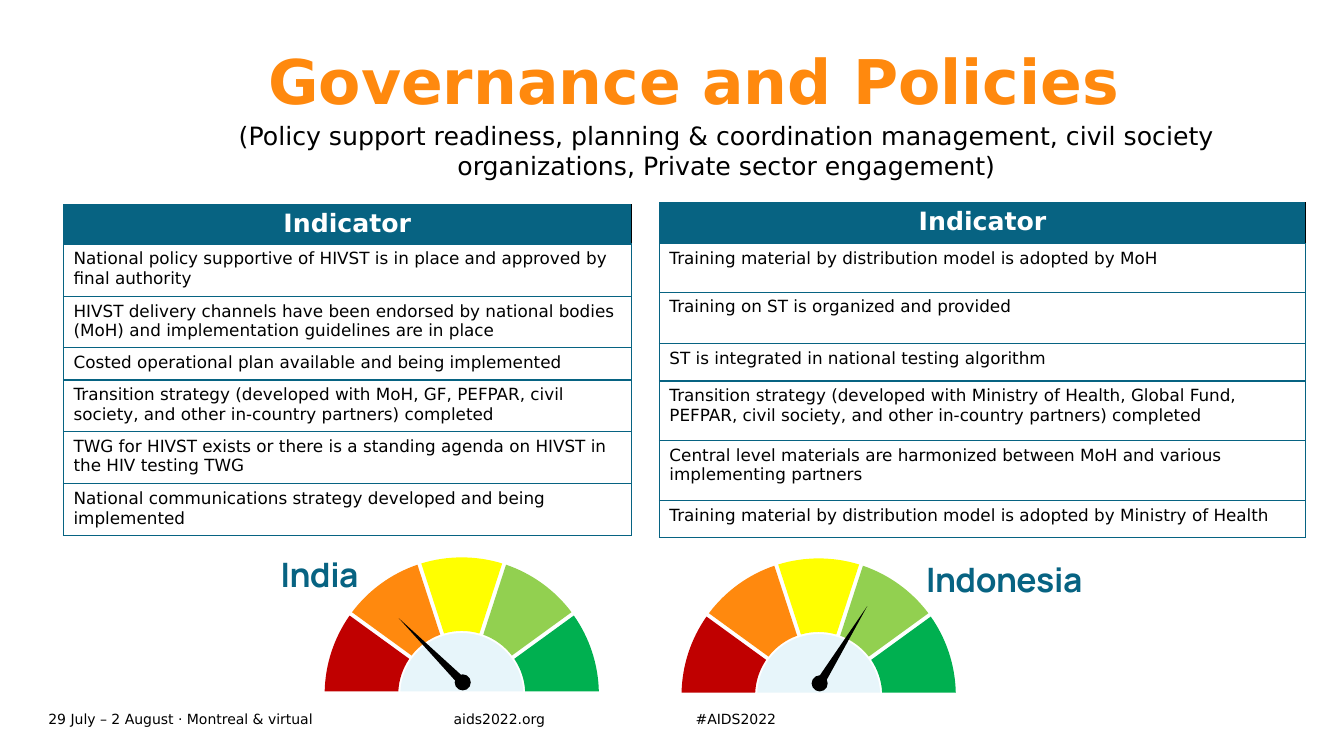
from dataclasses import dataclass
from itertools import chain, pairwise
from math import asin, cos, pi, radians, sin, tan

from lxml import etree
from pptx import Presentation
from pptx.dml.color import RGBColor
from pptx.enum import shapes, text
from pptx.oxml import ns
from pptx.util import Inches, Pt

COLORS = {
    "black": "000000", "white": "FFFFFF", "teal": "076382", "orange": "FF890E",
    "red": "C00000", "yellow": "FFFF00", "lime": "92D050", "green": "00B050",
    "hub": "E7F5FA",
}
BODY_FONT = "DejaVu Sans"
OUTER_RADIUS, INNER_RADIUS, HUB_RADIUS = 1.36, 0.63, 0.61
SLICE_GAP, BASE_GAP = 0.02, 0.03
SLICE_STARTS = {"yellow": 72, "orange": 108, "lime": 36, "red": 144, "green": 0}
SLICE_SWEEP = 36


@dataclass
class Label:
    words: str
    left: float
    top: float
    width: float
    height: float
    size: int
    color: str = "black"
    font: str = BODY_FONT
    bold: bool = False
    align: text.PP_ALIGN = text.PP_ALIGN.LEFT
    anchor: text.MSO_ANCHOR = text.MSO_ANCHOR.MIDDLE
    inset: bool = False
    tracking: int = 0


@dataclass
class IndicatorTable:
    left: float
    top: float
    width: float
    heights: list[float]
    indicators: list[str]


@dataclass
class Gauge:
    center_x: float
    center_y: float
    needle_angle: float


CENTER = text.PP_ALIGN.CENTER
FOOTERS = [
    Label(words, left, 7.01, width, 0.24, 10)
    for words, left, width in [("29 July – 2 August · Montreal & virtual", 0.48, 4.02),
                               ("aids2022.org", 4.5, 1.93), ("#AIDS2022", 6.9, 1.93)]
]
TITLE = Label("Governance and Policies", 2.66, 0.51, 10.07, 1.34, 44, "orange",
              bold=True, anchor=text.MSO_ANCHOR.TOP)
SUBTITLE = Label(
    "(Policy support readiness, planning & coordination management, civil society "
    "organizations, Private sector engagement)",
    1.95, 1.14, 10.51, 0.71, 18, align=CENTER, anchor=text.MSO_ANCHOR.TOP, inset=True)
COUNTRIES = [
    Label(name, left, top, 2.54, 0.5, 24, "teal", "Manrope", True, CENTER,
          text.MSO_ANCHOR.BOTTOM, True, -30)
    for name, left, top in [("India", 1.9, 5.44), ("Indonesia", 8.69, 5.49)]
]
TABLES = [
    IndicatorTable(0.63, 2.03, 5.63, [0.35, 0.52, 0.51, 0.32, 0.51, 0.52, 0.51], [
        "National policy supportive of HIVST is in place and approved by final authority",
        "HIVST delivery channels have been endorsed by national bodies (MoH) and "
        "implementation guidelines are in place",
        "Costed operational plan available and being implemented",
        "Transition strategy (developed with MoH, GF, PEFPAR, civil society, and other "
        "in-country partners) completed",
        "TWG for HIVST exists or there is a standing agenda on HIVST in the HIV testing TWG",
        "National communications strategy developed and being implemented",
    ]),
    IndicatorTable(6.54, 2.01, 6.41, [0.41, 0.48, 0.51, 0.37, 0.59, 0.6, 0.36], [
        "Training material by distribution model is adopted by MoH",
        "Training on ST is organized and provided",
        "ST is integrated in national testing algorithm",
        "Transition strategy (developed with Ministry of Health, Global Fund, PEFPAR, "
        "civil society, and other in-country partners) completed",
        "Central level materials are harmonized between MoH and various implementing partners",
        "Training material by distribution model is adopted by Ministry of Health",
    ]),
]
GAUGES = [Gauge(4.58, 6.89, 315.1), Gauge(8.12, 6.9, 31.6)]


def rgb(name: str) -> RGBColor:
    return RGBColor.from_string(COLORS[name])


def style_text(frame, words: str, size: int, color: str, font: str, bold: bool, align) -> None:
    frame.text = words
    para = frame.paragraphs[0]
    para.alignment = align
    span = para.runs[0].font
    span.size, span.name, span.bold = Pt(size), font, bold
    span.color.rgb = rgb(color)


def fill_label(box, label: Label) -> None:
    box.left, box.top = Inches(label.left), Inches(label.top)
    box.width, box.height = Inches(label.width), Inches(label.height)
    frame = box.text_frame
    frame.word_wrap = True
    frame.auto_size = text.MSO_AUTO_SIZE.NONE
    frame.vertical_anchor = label.anchor
    if not label.inset:
        frame.margin_left = frame.margin_right = frame.margin_top = frame.margin_bottom = 0
    style_text(frame, label.words, label.size, label.color, label.font, label.bold, label.align)
    if label.tracking:
        frame.paragraphs[0].runs[0].font._element.set("spc", str(label.tracking))


def add_label(page, label: Label) -> None:
    fill_label(page.shapes.add_textbox(0, 0, 0, 0), label)


def set_borders(cell, borders: dict[str, tuple[str, float]]) -> None:
    properties = cell._tc.get_or_add_tcPr()
    for position, (side, (color, width)) in enumerate(borders.items()):
        line = etree.Element(ns.qn(f"a:ln{side}"), w=str(Pt(width)))
        fill = etree.SubElement(line, ns.qn("a:solidFill"))
        etree.SubElement(fill, ns.qn("a:srgbClr"), val=COLORS[color])
        properties.insert(position, line)


def add_indicator_table(page, spec: IndicatorTable) -> None:
    rows = ["Indicator", *spec.indicators]
    table = page.shapes.add_table(
        len(rows), 1, Inches(spec.left), Inches(spec.top),
        Inches(spec.width), Inches(sum(spec.heights))).table
    table.horz_banding = False
    body_borders = {side: ("teal", 1) for side in "LRTB"}
    header_borders = {"L": ("teal", 0.5), "R": ("black", 1),
                      "T": ("teal", 0.5), "B": ("teal", 1)}
    for index, (words, height) in enumerate(zip(rows, spec.heights)):
        header = index == 0
        table.rows[index].height = Inches(height)
        cell = table.cell(index, 0)
        cell.fill.solid()
        cell.fill.fore_color.rgb = rgb("teal" if header else "white")
        style_text(cell.text_frame, words, 18 if header else 12,
                   "white" if header else "black", BODY_FONT, header,
                   CENTER if header else text.PP_ALIGN.LEFT)
        set_borders(cell, header_borders if header else body_borders)


def paint(shape, color: str) -> None:
    shape.shadow.inherit = False
    shape.fill.solid()
    shape.fill.fore_color.rgb = rgb(color)
    shape.line.fill.background()


def arc(gauge: Gauge, radius: float, start: float, end: float) -> list[tuple[int, int]]:
    """Bezier points counterclockwise from the right: a start, then three per curve."""
    first = radians(start) + asin((SLICE_GAP if start > 0 else BASE_GAP) / radius)
    last = radians(end) - asin((SLICE_GAP if end < 180 else BASE_GAP) / radius)
    stops = [first, pi / 2, last] if first < pi / 2 < last else [first, last]

    def point(angle: float, handle: float = 0) -> tuple[int, int]:
        return (Inches(gauge.center_x + radius * (cos(angle) - handle * sin(angle))),
                Inches(gauge.center_y - radius * (sin(angle) + handle * cos(angle))))

    points = [point(first)]
    for begin, finish in pairwise(stops):
        handle = 4 / 3 * tan((finish - begin) / 4)
        points += [point(begin, handle), point(finish, -handle), point(finish)]
    return points


def add_outline(group, arcs: list[list[tuple[int, int]]], color: str) -> None:
    """Draw arcs joined by straight sides, turning each three points into one curve."""
    points = list(chain.from_iterable(arcs))
    builder = group.shapes.build_freeform(*points[0])
    builder.add_line_segments(points[1:], close=True)
    shape = builder.convert_to_shape()
    lines = list(shape._element.iter(ns.qn("a:lnTo")))
    offset = 0
    for bend in arcs:
        for first in range(offset, offset + len(bend) - 1, 3):
            curve = etree.Element(ns.qn("a:cubicBezTo"))
            lines[first].addprevious(curve)
            for line in lines[first:first + 3]:
                curve.append(line[0])
                line.getparent().remove(line)
        offset += len(bend)
    paint(shape, color)


def add_gauge(page, gauge: Gauge) -> None:
    group = page.shapes.add_group_shape()
    for color, start in SLICE_STARTS.items():
        end = start + SLICE_SWEEP
        add_outline(group, [arc(gauge, OUTER_RADIUS, start, end),
                            arc(gauge, INNER_RADIUS, start, end)[::-1]], color)
    add_outline(group, [arc(gauge, HUB_RADIUS, 0, 180)], "hub")

    pivot_x, pivot_y = gauge.center_x + 0.01, gauge.center_y - 0.12
    width, length, dot, reach = 0.09, 0.92, 0.16, 0.44
    tilt = radians(gauge.needle_angle)
    needle = group.shapes.add_shape(
        shapes.MSO_SHAPE.ISOSCELES_TRIANGLE,
        Inches(pivot_x + reach * sin(tilt) - width / 2),
        Inches(pivot_y - reach * cos(tilt) - length / 2), Inches(width), Inches(length))
    needle.rotation = gauge.needle_angle
    paint(needle, "black")
    paint(group.shapes.add_shape(
        shapes.MSO_SHAPE.OVAL, Inches(pivot_x - dot / 2), Inches(pivot_y - dot / 2),
        Inches(dot), Inches(dot)), "black")


def main() -> None:
    deck = Presentation()
    deck.slide_width, deck.slide_height = Inches(13.33), Inches(7.5)
    page = deck.slides.add_slide(deck.slide_layouts[5])
    fill_label(page.shapes.title, TITLE)
    page.shapes.title.text_frame.paragraphs[0].line_spacing = 0.9
    for table in TABLES:
        add_indicator_table(page, table)
    for label in [*FOOTERS, SUBTITLE, *COUNTRIES]:
        add_label(page, label)
    for gauge in GAUGES:
        add_gauge(page, gauge)
    deck.save("out.pptx")


if __name__ == "__main__":
    main()
